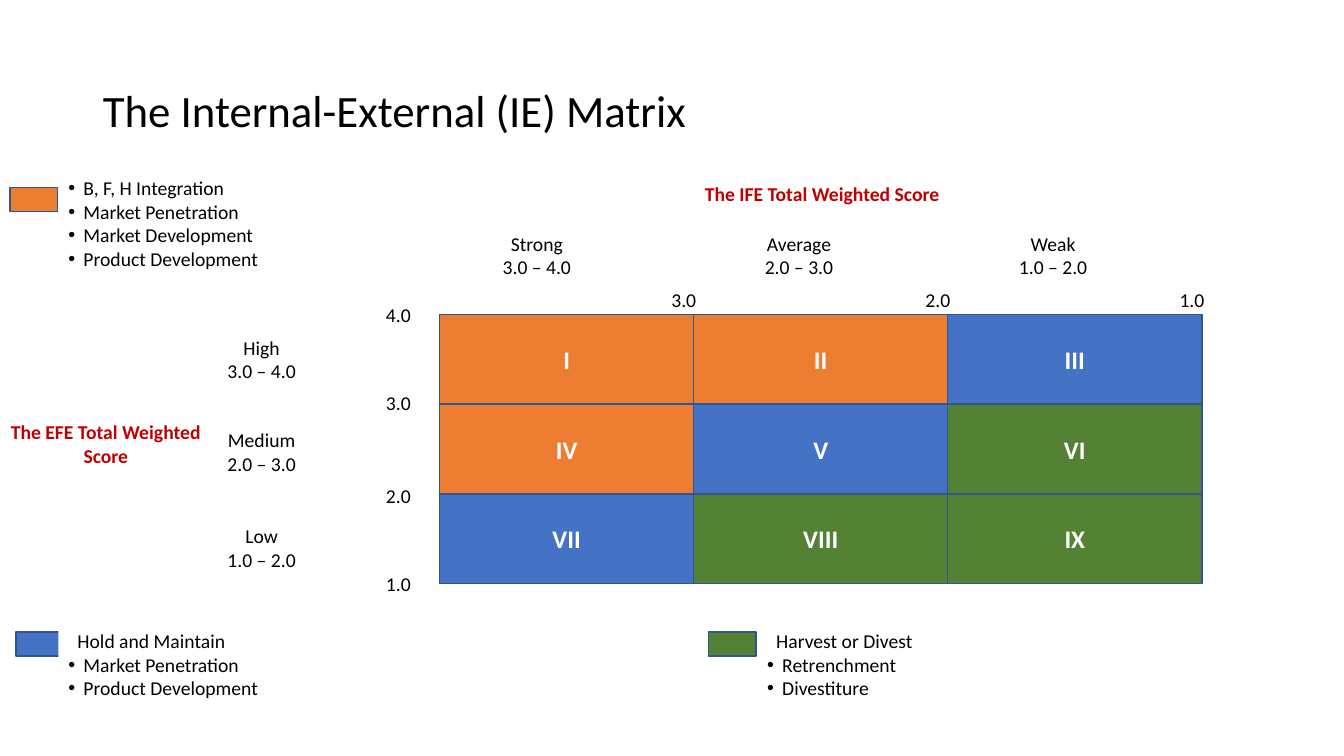
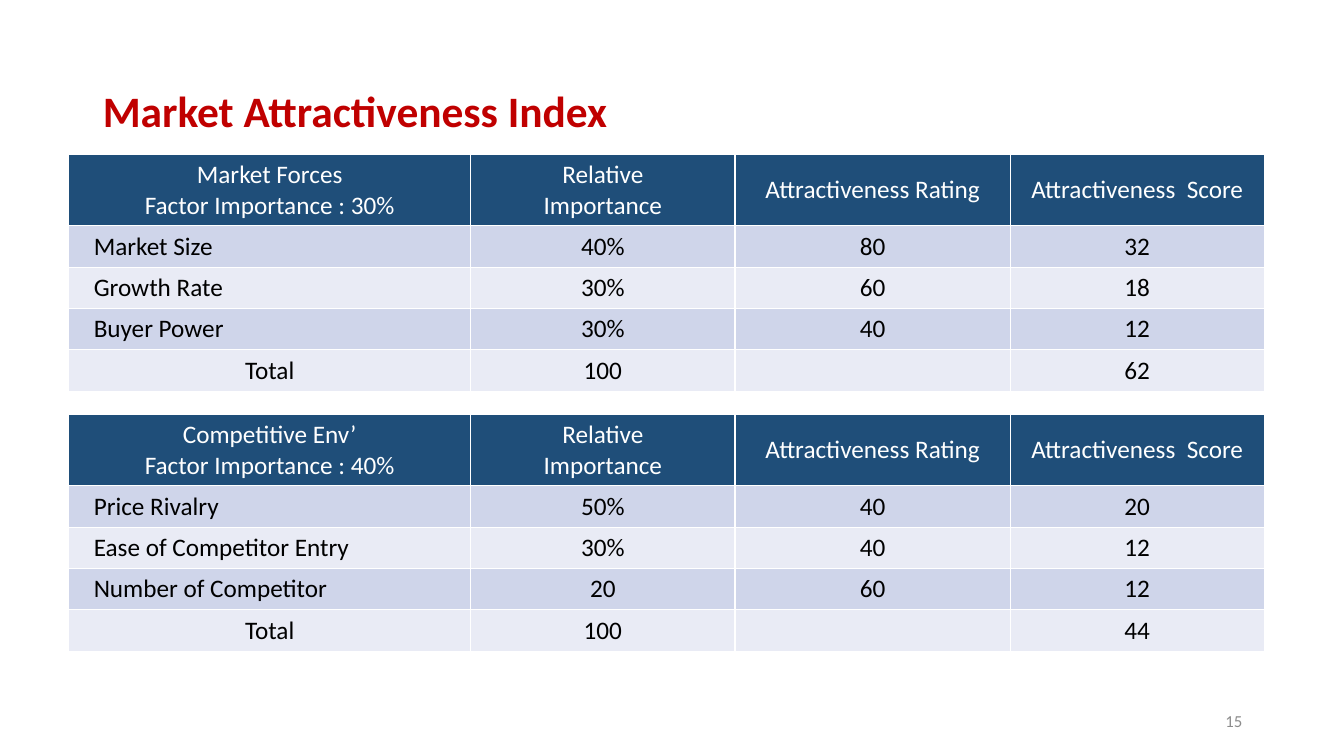
from lxml import etree
from pptx import Presentation
from pptx import util as u
from pptx.dml.color import RGBColor
from pptx.enum import shapes, text
from pptx.oxml import ns

BLACK, WHITE, RED, GREY = "000000", "FFFFFF", "C00000", "8C8C8C"
ORANGE, BLUE, GREEN, OUTLINE = "ED7D31", "4472C4", "548235", "325491"
HEADER, BANDS = "1F4E79", ("CFD5EA", "E9EBF5")
LEFT, CENTER, RIGHT = text.PP_ALIGN.LEFT, text.PP_ALIGN.CENTER, text.PP_ALIGN.RIGHT
MIDDLE = text.MSO_ANCHOR.MIDDLE


def rgb(value):
    return RGBColor.from_string(value)


def write(frame, lines, size=14, color=BLACK, bold=False, align=LEFT):
    """Fill a text frame, one paragraph a line, and return the paragraphs."""
    frame.text = "\n".join(lines)
    for paragraph in frame.paragraphs:
        paragraph.alignment = align
        for run in paragraph.runs:
            for name, value in {"size": u.Pt(size), "bold": bold, "name": "Calibri"}.items():
                setattr(run.font, name, value)
            run.font.color.rgb = rgb(color)
    return frame.paragraphs


prs = Presentation()
prs.slide_width, prs.slide_height = u.Inches(13.33), u.Inches(7.5)

# Shared title place
layout = prs.slide_layouts[5]
title_place = {"left": 0.92, "top": 0.4, "width": 11.5, "height": 1.45}
for name, value in title_place.items():
    setattr(layout.placeholders[0], name, u.Inches(value))

# Both slides with their titles
titles = [("The Internal-External (IE) Matrix", 32, BLACK, False),
          ("Market Attractiveness Index", 31, RED, True)]
for heading, size, color, bold in titles:
    slide = prs.slides.add_slide(layout)
    frame = slide.shapes.title.text_frame
    write(frame, [heading], size, color, bold)[0].line_spacing = 0.9
    for name, value in {"vertical_anchor": MIDDLE, "word_wrap": True,
                        "auto_size": text.MSO_AUTO_SIZE.NONE}.items():
        setattr(frame, name, value)
matrix_slide, index_slide = prs.slides

# Matrix cells and legend swatches
CELL_W, CELL_H, GRID_X, GRID_Y = 2.52, 0.89, 4.36, 3.12
quadrants = [("I", ORANGE), ("II", ORANGE), ("III", BLUE),
             ("IV", ORANGE), ("V", BLUE), ("VI", GREEN),
             ("VII", BLUE), ("VIII", GREEN), ("IX", GREEN)]
boxes = [(numeral, fill, GRID_X + i % 3 * CELL_W, GRID_Y + i // 3 * CELL_H, CELL_W, CELL_H)
         for i, (numeral, fill) in enumerate(quadrants)]
boxes += [("", ORANGE, 0.1, 1.86, 0.47, 0.24),
          ("", BLUE, 0.16, 6.27, 0.47, 0.24),
          ("", GREEN, 7.03, 6.27, 0.47, 0.24)]
for numeral, fill, *place in boxes:
    box = matrix_slide.shapes.add_shape(shapes.MSO_SHAPE.RECTANGLE, *map(u.Inches, place))
    box.shadow.inherit = False
    box.fill.solid()
    box.fill.fore_color.rgb = rgb(fill)
    box.line.color.rgb = rgb(OUTLINE)
    box.line.width = u.Pt(1)
    box.text_frame.vertical_anchor = MIDDLE
    if numeral:
        write(box.text_frame, [numeral], 18, WHITE, True, CENTER)

# Scale values and range names along both axes
labels = [([value], 3.73, top, 0.45, 0.34, LEFT) for value, top in
          (("4.0", 2.96), ("3.0", 3.83), ("2.0", 4.75), ("1.0", 5.62))]
labels += [([value], 6.56 + i * CELL_W, 2.81, 0.45, 0.34, LEFT)
           for i, value in enumerate(("3.0", "2.0", "1.0"))]
ranges = ("3.0 – 4.0", "2.0 – 3.0", "1.0 – 2.0")
labels += [([level, span], left, 2.25, 0.89, 0.57, CENTER) for level, span, left in
           zip(("Strong", "Average", "Weak"), ranges, (4.88, 7.48, 10))]
labels += [([level, span], 2.15, top, 0.89, 0.57, CENTER) for level, span, top in
           zip(("High", "Medium", "Low"), ranges, (3.28, 4.2, 5.15))]
for lines, *place, align in labels:
    label = matrix_slide.shapes.add_textbox(*map(u.Inches, place))
    label.text_frame.word_wrap = False
    write(label.text_frame, lines, align=align)

# Axis titles
for heading, *place in (("The EFE Total Weighted Score", 0, 4.12, 2.1, 0.57),
                        ("The IFE Total Weighted Score", 6.14, 1.76, 4.03, 0.34)):
    axis = matrix_slide.shapes.add_textbox(*map(u.Inches, place))
    axis.text_frame.word_wrap = True
    write(axis.text_frame, [heading], color=RED, bold=True, align=CENTER)

# Legend lists: optional heading, then bulleted strategies
legends = [
    (None, ["B, F, H Integration", "Market Penetration",
            "Market Development", "Product Development"], 0.58, 1.7, 1.04),
    ("Hold and Maintain", ["Market Penetration", "Product Development"], 0.58, 6.19, 0.81),
    ("Harvest or Divest", ["Retrenchment", "Divestiture"], 7.51, 6.19, 0.81),
]
for heading, strategies, left, top, height in legends:
    legend = matrix_slide.shapes.add_textbox(*map(u.Inches, (left, top, 3.36, height)))
    legend.text_frame.word_wrap = True
    if heading:
        legend.fill.solid()
        legend.fill.fore_color.rgb = rgb(WHITE)
    lines = ([heading] if heading else []) + strategies
    for line, paragraph in zip(lines, write(legend.text_frame, lines)):
        props = paragraph._p.get_or_add_pPr()
        if line == heading:
            props.set("marL", str(u.Inches(0.09)))
            continue
        props.set("marL", str(u.Inches(0.15)))
        props.set("indent", str(u.Inches(-0.15)))
        etree.SubElement(props, ns.qn("a:buFont")).set("typeface", "Arial")
        etree.SubElement(props, ns.qn("a:buChar")).set("char", "•")

# Soft shadow behind the index title
title_props = index_slide.shapes.title.text_frame.paragraphs[0].runs[0].font._element
effects = etree.Element(ns.qn("a:effectLst"))
shadow = etree.SubElement(effects, ns.qn("a:outerShdw"), blurRad="38100", dist="38100",
                          dir="2700000", algn="tl")
shade = etree.SubElement(shadow, ns.qn("a:srgbClr"), val=BLACK)
etree.SubElement(shade, ns.qn("a:alpha"), val="43000")
title_props.find(ns.qn("a:solidFill")).addnext(effects)

# Factor tables
columns = ["Relative\nImportance", "Attractiveness Rating", "Attractiveness  Score"]
factors = [
    (1.53, [["Market Forces\nFactor Importance : 30%", *columns],
            ["Market Size", "40%", "80", "32"],
            ["Growth Rate", "30%", "60", "18"],
            ["Buyer Power", "30%", "40", "12"],
            ["Total", "100", "", "62"]]),
    (4.11, [["Competitive Env’\nFactor Importance : 40%", *columns],
            ["Price Rivalry", "50%", "40", "20"],
            ["Ease of Competitor Entry", "30%", "40", "12"],
            ["Number of Competitor", "20", "60", "12"],
            ["Total", "100", "", "44"]]),
]
for top, rows in factors:
    place = map(u.Inches, (0.68, top, 11.86, 2.32))
    table = index_slide.shapes.add_table(len(rows), 4, *place).table
    for column, width in zip(table.columns, (3.99, 2.62, 2.73, 2.52)):
        column.width = u.Inches(width)
    for r, row in enumerate(rows):
        table.rows[r].height = u.Inches(0.41 if r else 0.7)
        for c, entry in enumerate(row):
            cell = table.cell(r, c)
            is_factor = c == 0 and 0 < r < len(rows) - 1
            for name, value in {"vertical_anchor": MIDDLE,
                                "margin_left": u.Inches(0.25 if is_factor else 0.13),
                                "margin_right": u.Inches(0.13)}.items():
                setattr(cell, name, value)
            cell.fill.solid()
            cell.fill.fore_color.rgb = rgb(BANDS[(r - 1) % 2] if r else HEADER)
            if entry:
                write(cell.text_frame, entry.split("\n"), 18, BLACK if r else WHITE,
                      align=LEFT if is_factor else CENTER)

# Page number
page = index_slide.shapes.add_textbox(*map(u.Inches, (9.42, 6.95, 3, 0.4)))
page.text_frame.word_wrap = True
page.text_frame.vertical_anchor = MIDDLE
write(page.text_frame, ["15"], 12, GREY, align=RIGHT)

prs.save("out.pptx")
